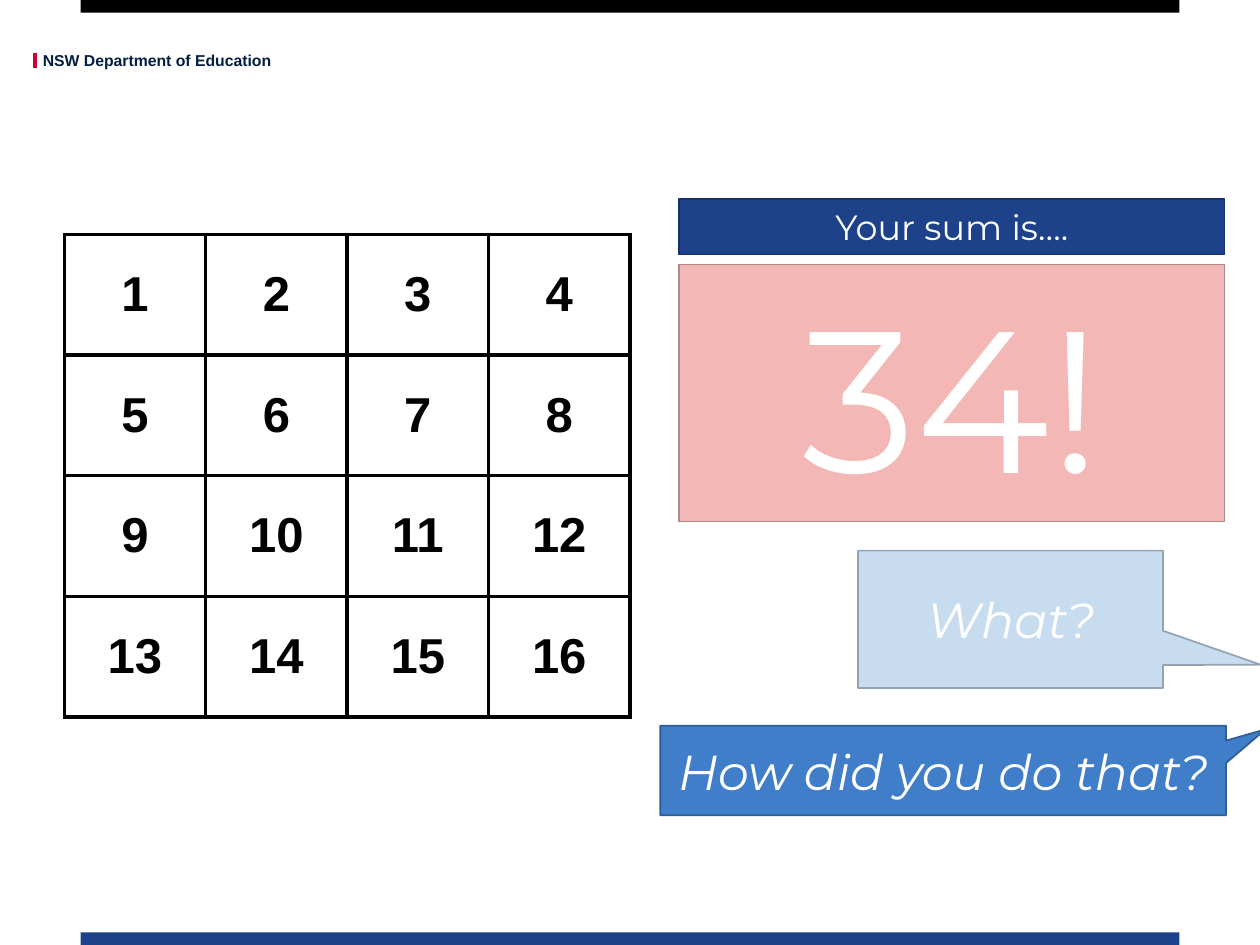
from lxml.etree import SubElement
from pptx import Presentation
from pptx.dml.color import RGBColor
from pptx.enum.shapes import MSO_CONNECTOR, MSO_SHAPE
from pptx.enum.text import MSO_ANCHOR, PP_ALIGN
from pptx.oxml import parse_xml
from pptx.oxml.ns import nsdecls, qn
from pptx.util import Inches, Pt

BLACK = RGBColor(0x00, 0x00, 0x00)
WHITE = RGBColor(0xFF, 0xFF, 0xFF)
INK = RGBColor(0x04, 0x1E, 0x42)
RED = RGBColor(0xCE, 0x00, 0x37)
NAVY = RGBColor(0x1D, 0x42, 0x8A)
NAVY_EDGE = RGBColor(0x15, 0x31, 0x66)
PINK = RGBColor(0xF3, 0xB8, 0xB5)
PINK_EDGE = RGBColor(0xB4, 0x88, 0x86)
PALE = RGBColor(0xC8, 0xDC, 0xF0)
PALE_EDGE = RGBColor(0x94, 0xA3, 0xB2)
BLUE = RGBColor(0x40, 0x7E, 0xC9)
BLUE_EDGE = RGBColor(0x2F, 0x5D, 0x95)


def put_text(frame, text, size, color=WHITE, font="Montserrat",
             bold=False, italic=False, align=PP_ALIGN.CENTER):
    para = frame.paragraphs[0]
    para.alignment = align
    run = para.add_run()
    run.text = text
    run.font.name = font
    run.font.size = Pt(size)
    run.font.color.rgb = color
    run.font.bold = bold
    run.font.italic = italic


def add_box(slide, box, fill, edge=None, kind=MSO_SHAPE.RECTANGLE, tip=None):
    """Add a filled shape; tip is the callout's point, relative to its centre."""
    shape = slide.shapes.add_shape(kind, *map(Inches, box))
    shape.shadow.inherit = False
    shape.fill.solid()
    shape.fill.fore_color.rgb = fill
    if edge is None:
        shape.line.fill.background()
    else:
        shape.line.color.rgb = edge
        shape.line.width = Pt(1)
    for i, value in enumerate(tip or ()):
        shape.adjustments[i] = value
    frame = shape.text_frame
    frame.word_wrap = True
    frame.vertical_anchor = MSO_ANCHOR.MIDDLE
    return shape


def add_header(slide, left, top, width, height):
    mark = slide.shapes.add_connector(
        MSO_CONNECTOR.STRAIGHT, Inches(left), Inches(top + 0.02),
        Inches(left), Inches(top + 0.14))
    mark.line.color.rgb = RED
    mark.line.width = Pt(2.5)
    SubElement(mark._element.spPr, qn("a:effectLst"))
    label = slide.shapes.add_textbox(
        Inches(left + 0.06), Inches(top), Inches(width - 0.06), Inches(height))
    frame = label.text_frame
    frame.word_wrap = False
    frame.margin_left = frame.margin_right = 0
    frame.margin_top = frame.margin_bottom = 0
    put_text(frame, "NSW Department of Education", 9, INK, "Arial",
             bold=True, align=PP_ALIGN.LEFT)


def add_bars(slide, left, width, height):
    add_box(slide, (left, 7.5 - height, width, height), NAVY)
    add_box(slide, (left, 0, width, height), BLACK)


def add_borders(cell):
    props = cell._tc.get_or_add_tcPr()
    for i, side in enumerate(("lnL", "lnR", "lnT", "lnB")):
        props.insert(i, parse_xml(
            f'<a:{side} {nsdecls("a")} w="{Pt(2.25)}"><a:solidFill>'
            f'<a:srgbClr val="{BLACK}"/></a:solidFill></a:{side}>'))


def add_grid(slide, left, top, width, height, count=4):
    """Add a square number grid, counting from 1 row by row."""
    table = slide.shapes.add_table(
        count, count, *map(Inches, (left, top, width, height))).table
    table.first_row = table.horz_banding = False
    for i, cell in enumerate(table.iter_cells()):
        cell.fill.background()
        cell.vertical_anchor = MSO_ANCHOR.MIDDLE
        put_text(cell.text_frame, str(i + 1), 28, BLACK, "Arial", bold=True)
        add_borders(cell)


def add_answer(slide, left, top, width, height):
    title = add_box(slide, (left, top, width, 0.44), NAVY, NAVY_EDGE)
    put_text(title.text_frame, "Your sum is….", 20)
    total = add_box(slide, (left, top + 0.52, width, height - 0.52),
                    PINK, PINK_EDGE)
    put_text(total.text_frame, "34!", 115)


def add_speech(slide, box, text, fill, edge, tip):
    shape = add_box(slide, box, fill, edge,
                    MSO_SHAPE.RECTANGULAR_CALLOUT, tip)
    put_text(shape.text_frame, text, 28, italic=True)


def main():
    deck = Presentation()
    deck.slide_width = Inches(10)
    deck.slide_height = Inches(7.5)
    slide = deck.slides.add_slide(deck.slide_layouts[6])
    add_header(slide, 0.28, 0.4, 1.89, 0.15)
    add_bars(slide, 0.64, 8.72, 0.1)
    add_grid(slide, 0.51, 1.86, 4.49, 3.83)
    add_answer(slide, 5.39, 1.58, 4.33, 2.56)
    add_speech(slide, (6.81, 4.37, 2.42, 1.09), "What?",
               PALE, PALE_EDGE, (0.82, 0.33))
    add_speech(slide, (5.24, 5.76, 4.49, 0.71), "How did you do that?",
               BLUE, BLUE_EDGE, (0.57, -0.46))
    deck.save("out.pptx")


if __name__ == "__main__":
    main()
